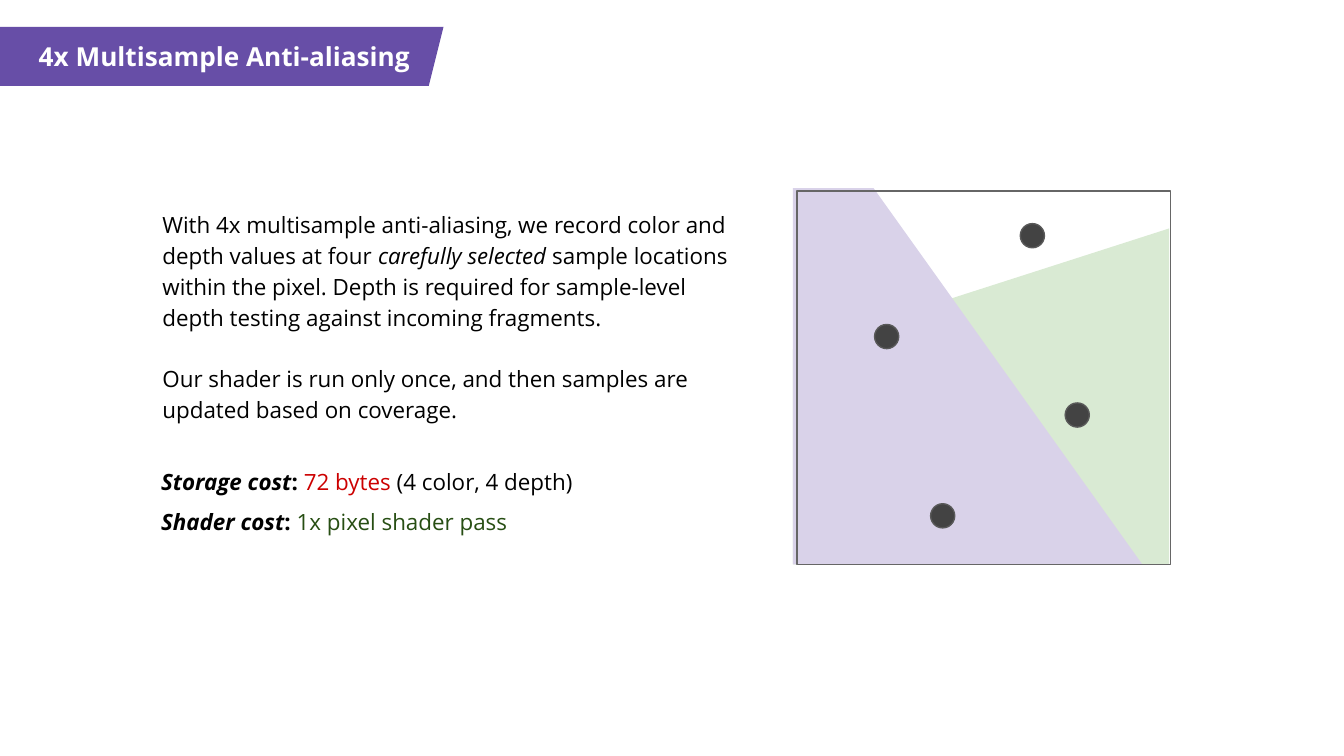
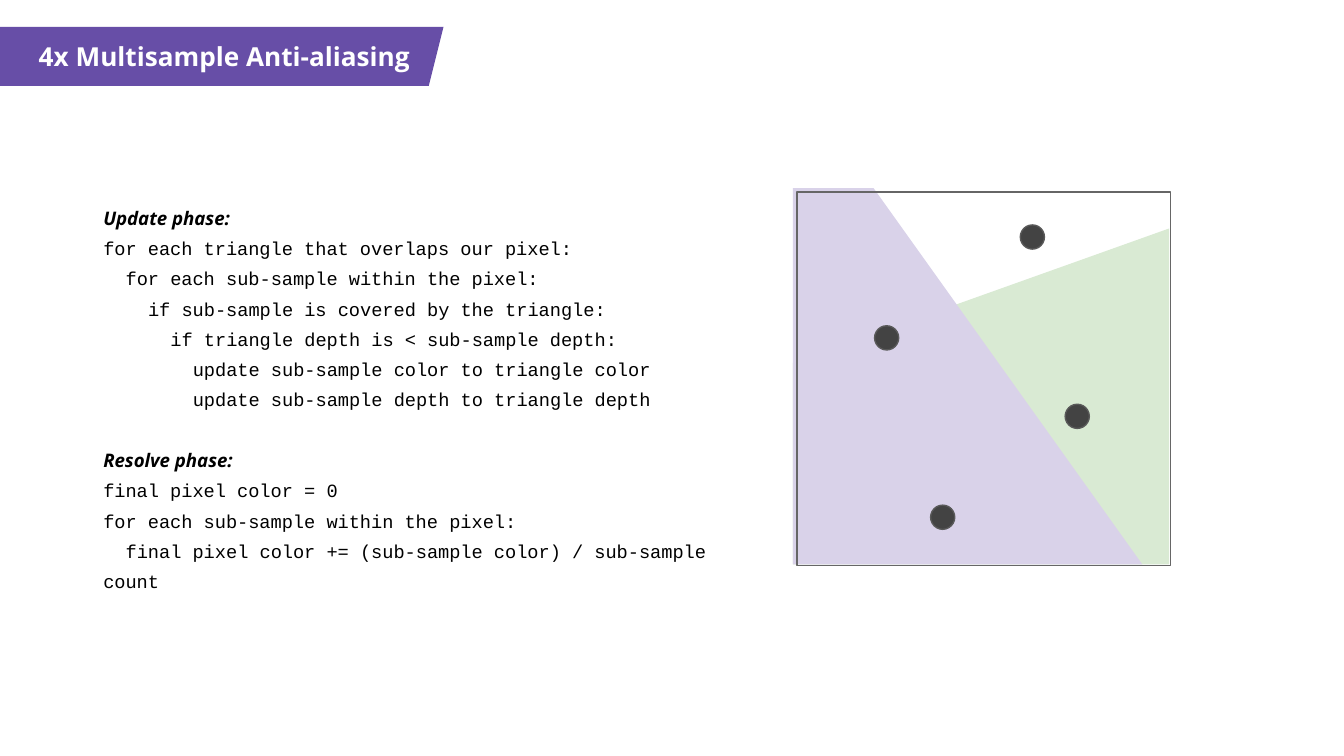
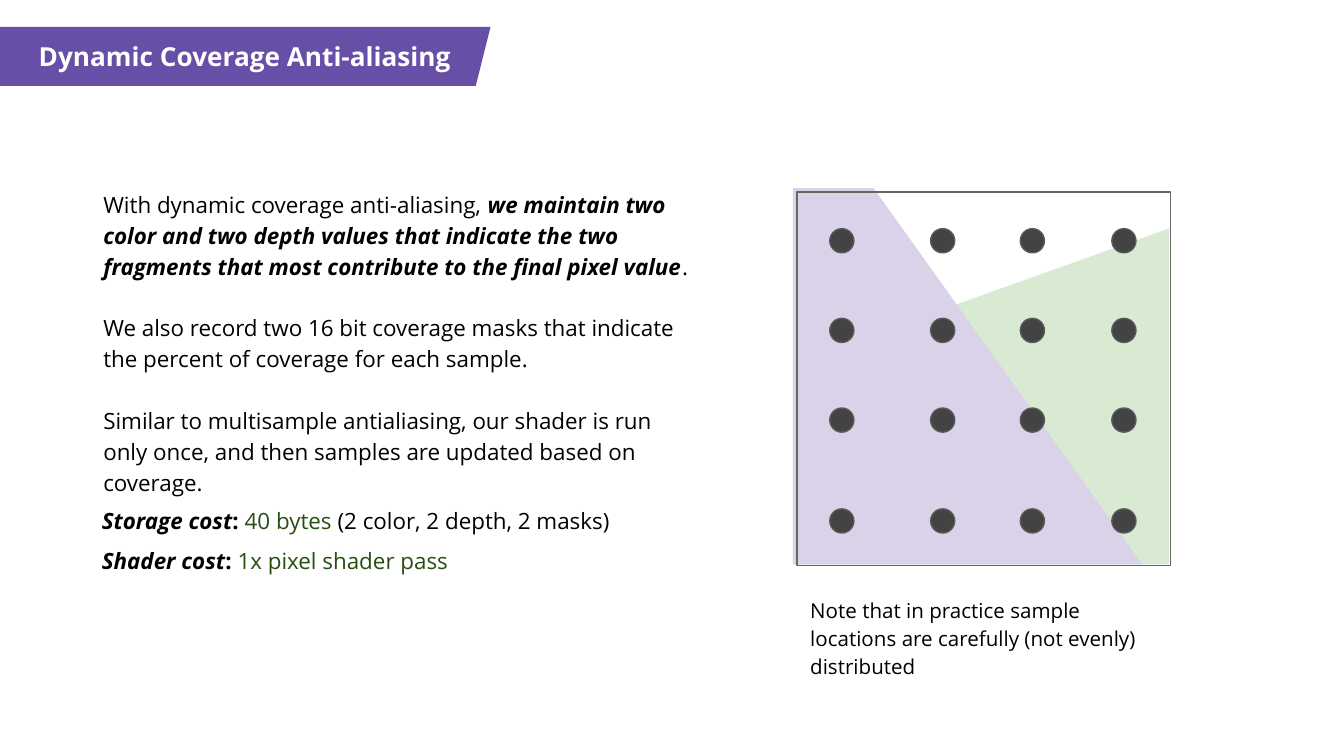
import dataclasses
import itertools

import pptx
import pptx.dml.color
import pptx.enum.shapes
import pptx.util

CELL = pptx.util.Inches(0.1)
BODY_FONT, CODE_FONT = "Open Sans", "Courier New"
BLACK, WHITE, VIOLET = "000000", "FFFFFF", "674EA7"
GOOD, BAD = "274E13", "CC0000"
LILAC, MINT = "D9D2E9", "D9EAD3"
PIXEL_EDGE, SAMPLE_FILL, SAMPLE_EDGE = "666666", "434343", "595959"

PIXEL_SIDE, SAMPLE_SIZE = 27.8, 1.8
GREEN_TRIANGLE = [(1, 0.09), (0, 0.44), (0, 1), (1, 1)]
PURPLE_TRIANGLE = [(0.215, 0), (0.935, 1), (0, 1), (0, 0)]
FOUR_SAMPLES = [(0.63, 0.12), (0.24, 0.39), (0.75, 0.6), (0.39, 0.87)]
SAMPLE_COLUMNS = [0.12, 0.39, 0.63, 0.875]
SAMPLE_ROWS = [0.13, 0.37, 0.61, 0.88]


@dataclasses.dataclass
class Box:
    """A region measured in columns and rows of the slide grid."""
    col: float
    row: float
    cols: float
    rows: float

    def emu(self):
        """Return left, top, width and height as slide lengths."""
        return [round(n * CELL) for n in (self.col, self.row, self.cols, self.rows)]

    def point(self, across, down):
        """Return the grid position at a share of the box."""
        return self.col + across * self.cols, self.row + down * self.rows


@dataclasses.dataclass
class Run:
    """A stretch of text in one style."""
    text: str
    color: str = BLACK
    bold: bool = False
    italic: bool = False
    font: str = BODY_FONT


@dataclasses.dataclass
class Paragraph:
    """Runs with the space above and the first-line indent in points."""
    runs: list
    gap: float = 0
    indent: float = 0


def rgb(hex_color):
    """Turn a hex string into a colour."""
    return pptx.dml.color.RGBColor.from_string(hex_color)


def paint(shape, fill=None, edge=None):
    """Set the fill and the outline of a shape and drop its shadow."""
    shape.shadow.inherit = False
    if fill:
        shape.fill.solid()
        shape.fill.fore_color.rgb = rgb(fill)
    else:
        shape.fill.background()
    if edge:
        shape.line.color.rgb = rgb(edge)
        shape.line.width = pptx.util.Pt(0.75)
    else:
        shape.line.fill.background()


def draw_preset(slide, kind, box, fill=None, edge=None):
    """Draw a preset shape in a box."""
    shape = slide.shapes.add_shape(kind, *box.emu())
    paint(shape, fill, edge)
    return shape


def write(slide, box, paragraphs, size, spacing=1.0):
    """Write paragraphs in a text box."""
    frame = slide.shapes.add_textbox(*box.emu()).text_frame
    frame.word_wrap = True
    frame.margin_left = frame.margin_right = CELL
    frame.margin_top = frame.margin_bottom = CELL
    for index, content in enumerate(paragraphs):
        line = frame.add_paragraph() if index else frame.paragraphs[0]
        line.line_spacing = spacing
        line.space_before = pptx.util.Pt(content.gap)
        if content.indent:
            properties = line._p.get_or_add_pPr()
            properties.set("marL", "0")
            properties.set("indent", str(pptx.util.Pt(content.indent)))
        for piece in content.runs:
            run = line.add_run()
            run.text = piece.text
            run.font.name = piece.font
            run.font.size = pptx.util.Pt(size)
            run.font.bold = piece.bold
            run.font.italic = piece.italic
            run.font.color.rgb = rgb(piece.color)


def draw_title(slide, title, band_cols):
    """Draw the slanted title band and its title."""
    band = draw_preset(slide, pptx.enum.shapes.MSO_SHAPE.PARALLELOGRAM,
                       Box(-3.8, 2, band_cols, 4.4), VIOLET)
    band.adjustments[0] = 0.25
    write(slide, Box(1.9, 2, 33, 4.4), [Paragraph([Run(title, WHITE, bold=True)])], 14)


def draw_pixel(slide, box, samples):
    """Draw a pixel covered by two triangles, with its sample points."""
    for corners, fill in ((GREEN_TRIANGLE, MINT), (PURPLE_TRIANGLE, LILAC)):
        start, *rest = [box.point(*corner) for corner in corners]
        outline = slide.shapes.build_freeform(*start, scale=CELL)
        outline.add_line_segments(rest, close=True)
        paint(outline.convert_to_shape(), fill)
    draw_preset(slide, pptx.enum.shapes.MSO_SHAPE.RECTANGLE, box, edge=PIXEL_EDGE)
    for sample in samples:
        col, row = box.point(*sample)
        dot = Box(col - SAMPLE_SIZE / 2, row - SAMPLE_SIZE / 2, SAMPLE_SIZE, SAMPLE_SIZE)
        draw_preset(slide, pptx.enum.shapes.MSO_SHAPE.OVAL, dot, SAMPLE_FILL, SAMPLE_EDGE)


def write_costs(slide, box, storage, storage_color, storage_parts):
    """Write the storage and shader costs of a method."""
    costs = [("Storage cost", [Run(storage, storage_color), Run(storage_parts)]),
             ("Shader cost", [Run("1x pixel shader pass", GOOD)])]
    write(slide, box, [
        Paragraph([Run(label, bold=True, italic=True), Run(": ", bold=True), *values])
        for label, values in costs], 12, 1.5)


def write_body(slide, box, statements):
    """Write statements set apart by the height of one line."""
    write(slide, box, [Paragraph(runs, gap=16.6 if index else 0)
                       for index, runs in enumerate(statements)], 12, 1.15)


def write_phases(slide, box, phases):
    """Write pseudocode phases, each code line given with its depth."""
    lines = []
    for heading, code in phases:
        lines.append(Paragraph([Run(heading, bold=True, italic=True)],
                               gap=16.2 if lines else 0))
        lines += [Paragraph([Run(text, font=CODE_FONT)], indent=12 * depth)
                  for depth, text in code]
    write(slide, box, lines, 10, 1.35)


def multisample_slide(slide):
    """Explain multisampling and what it costs."""
    draw_pixel(slide, Box(59.3, 14.2, PIXEL_SIDE, PIXEL_SIDE), FOUR_SAMPLES)
    write_body(slide, Box(11.1, 14.4, 45.9, 18.4), [
        [Run("With 4x multisample anti-aliasing, we record color and depth values at four "),
         Run("carefully selected", italic=True),
         Run(" sample locations within the pixel. Depth is required for sample-level "
             "depth testing against incoming fragments.")],
        [Run("Our shader is run only once, and then samples are updated based on coverage.")],
    ])
    draw_title(slide, "4x Multisample Anti-aliasing", 36.8)
    write_costs(slide, Box(11, 32.8, 44.6, 9.1), "72 bytes", BAD, " (4 color, 4 depth)")


def algorithm_slide(slide):
    """Show the multisampling pseudocode."""
    draw_pixel(slide, Box(59.3, 14.3, PIXEL_SIDE, PIXEL_SIDE), FOUR_SAMPLES)
    write_phases(slide, Box(6.7, 13.8, 49.1, 29.3), [
        ("Update phase:", [
            (0, "for each triangle that overlaps our pixel:"),
            (1, "for each sub-sample within the pixel:"),
            (2, "if sub-sample is covered by the triangle:"),
            (3, "if triangle depth is < sub-sample depth:"),
            (4, "update sub-sample color to triangle color"),
            (4, "update sub-sample depth to triangle depth")]),
        ("Resolve phase:", [
            (0, "final pixel color = 0"),
            (0, "for each sub-sample within the pixel:"),
            (1, "final pixel color += (sub-sample color) / sub-sample count")]),
    ])
    draw_title(slide, "4x Multisample Anti-aliasing", 36.8)


def dynamic_coverage_slide(slide):
    """Explain dynamic coverage and what it costs."""
    samples = [(across, down)
               for down, across in itertools.product(SAMPLE_ROWS, SAMPLE_COLUMNS)]
    draw_pixel(slide, Box(59.3, 14.3, PIXEL_SIDE, PIXEL_SIDE), samples)
    write_body(slide, Box(6.7, 12.9, 45.9, 22.9), [
        [Run("With dynamic coverage anti-aliasing, "),
         Run("we maintain two color and two depth values that indicate the two fragments "
             "that most contribute to the final pixel value", bold=True, italic=True),
         Run(".")],
        [Run("We also record two 16 bit coverage masks that indicate the percent of "
             "coverage for each sample.")],
        [Run("Similar to multisample antialiasing, our shader is run only once, and then "
             "samples are updated based on coverage.")],
    ])
    draw_title(slide, "Dynamic Coverage Anti-aliasing", 40.3)
    write_costs(slide, Box(6.6, 35.7, 44.6, 9.1), "40 bytes", GOOD,
                " (2 color, 2 depth, 2 masks)")
    write(slide, Box(59.3, 43.2, 28.8, 6.5), [Paragraph([Run(
        "Note that in practice sample locations are carefully (not evenly) distributed")])],
        11, 1.15)


def main():
    """Build the deck."""
    deck = pptx.Presentation()
    deck.slide_width = 100 * CELL
    deck.slide_height = round(56.25 * CELL)
    blank = deck.slide_layouts[6]
    for build in (multisample_slide, algorithm_slide, dynamic_coverage_slide):
        build(deck.slides.add_slide(blank))
    deck.save("out.pptx")


if __name__ == "__main__":
    main()
